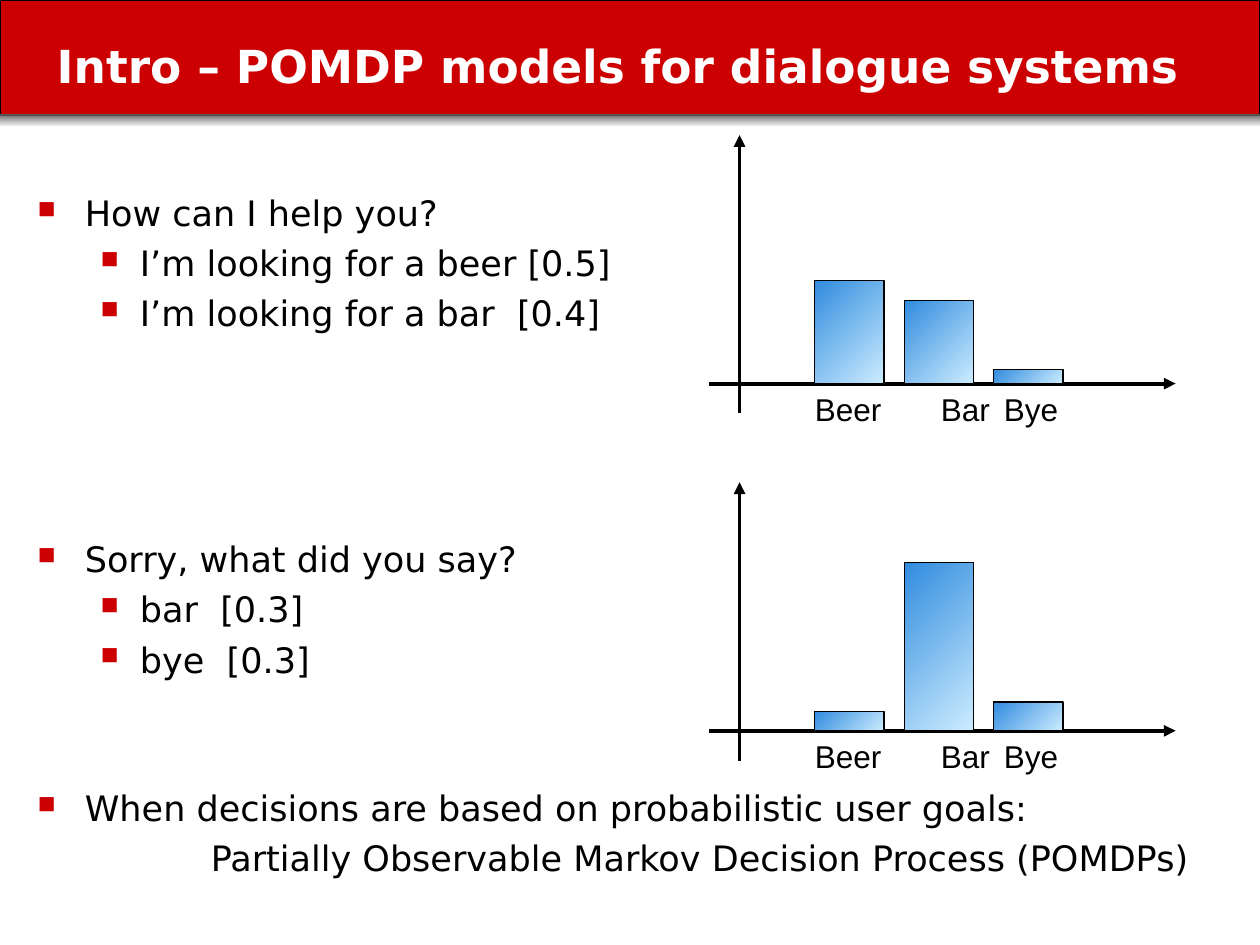
import pptx
import pptx.util
import pptx.dml.color
import pptx.enum.shapes
import pptx.enum.text
import pptx.oxml
import pptx.oxml.ns

Pt = pptx.util.Pt
qn = pptx.oxml.ns.qn
SHAPE = pptx.enum.shapes.MSO_SHAPE
LINE = pptx.enum.shapes.MSO_CONNECTOR
ANCHOR = pptx.enum.text.MSO_ANCHOR
ALIGN = pptx.enum.text.PP_ALIGN

COLORS = {"red": "CC0000", "black": "000000", "white": "FFFFFF",
          "dark": "5C5C5C", "gray": "808080", "blue": "318CDE", "pale": "CCECFF"}
FONTS = {
    "title": {"name": "DejaVu Sans", "size": Pt(26), "bold": True, "color": "white"},
    "body": {"name": "DejaVu Sans", "size": Pt(20), "color": "black"},
    "label": {"name": "Arial", "size": Pt(18), "color": "black"},
}
# Space before a paragraph: normal, and gaps between topics
NEAR, WIDE, MID = 4.7, 116.5, 60.6
# Left margin and hanging indent of each kind of paragraph
INDENTS = {"main": (27, -27), "sub": (58.5, -22.5), "plain": (99, 0)}
LINES = [
    ("main", NEAR, "How can I help you?"),
    ("sub", NEAR, "I’m looking for a beer [0.5]"),
    ("sub", NEAR, "I’m looking for a bar  [0.4]"),
    ("main", WIDE, "Sorry, what did you say?"),
    ("sub", NEAR, "bar  [0.3]"),
    ("sub", NEAR, "bye  [0.3]"),
    ("main", MID, "When decisions are based on probabilistic user goals:"),
    ("plain", NEAR, "Partially Observable Markov Decision Process (POMDPs)"),
]
LABELS = ["Beer", "Bar", "Bye"]
STOPS = [10, 68.3, 121]


def rgb(name):
    return pptx.dml.color.RGBColor.from_string(COLORS[name])


def node(parent, tag, **attrs):
    child = pptx.oxml.parse_xml(
        '<%s xmlns:a="http://schemas.openxmlformats.org/drawingml/2006/main"/>' % tag)
    for key, value in attrs.items():
        child.set(key, str(value))
    parent.append(child)
    return child


def style(run, kind):
    for key, value in FONTS[kind].items():
        if key == "color":
            run.font.color.rgb = rgb(value)
        else:
            setattr(run.font, key, value)


def write(para, text, kind):
    run = para.add_run()
    run.text = text
    style(run, kind)


def rect(slide, box, fill, angle=None, line=True):
    shape = slide.shapes.add_shape(SHAPE.RECTANGLE, *map(Pt, box))
    shape.shadow.inherit = False
    if angle is None:
        shape.fill.solid()
        shape.fill.fore_color.rgb = rgb(fill)
    else:
        shape.fill.gradient()
        shape.fill.gradient_angle = angle
        for stop, name in zip(shape.fill.gradient_stops, fill):
            stop.color.rgb = rgb(name)
    if line:
        shape.line.color.rgb = rgb("black")
        shape.line.width = Pt(0.75)
    else:
        shape.line.fill.background()
    return shape


def arrow(slide, x1, y1, x2, y2):
    line = slide.shapes.add_connector(LINE.STRAIGHT, *map(Pt, (x1, y1, x2, y2)))
    line.line.color.rgb = rgb("black")
    line.line.width = Pt(2.25)
    node(line.line._get_or_add_ln(), "a:tailEnd", type="triangle")
    node(line.element.spPr, "a:effectLst")


def header(slide, box):
    x, y, w, h = box
    title = slide.shapes.title
    band = rect(slide, box, "red")
    shade = rect(slide, (x, y + h, w, 6), ("dark", "gray"), 270, False)
    # Fade the lower end of the shade to clear
    last = list(shade.element.spPr.iter(qn("a:srgbClr")))[-1]
    node(last, "a:alpha", val=0)
    for part in (band, shade):
        title.element.addprevious(part.element)
    place = {"left": x + 25.2, "top": y + 15.1, "width": w - 25.2, "height": 44.6}
    for key, value in place.items():
        setattr(title, key, Pt(value))
    frame = title.text_frame
    frame.vertical_anchor = ANCHOR.MIDDLE
    para = frame.paragraphs[0]
    para.alignment = ALIGN.LEFT
    write(para, "Intro – POMDP models for dialogue systems", "title")


def talk(slide, box):
    frame = slide.shapes.add_textbox(*map(Pt, box)).text_frame
    frame.word_wrap = True
    for i, (kind, gap, text) in enumerate(LINES):
        para = frame.add_paragraph() if i else frame.paragraphs[0]
        para.level = int(kind == "sub")
        para.space_before = Pt(gap)
        write(para, text, "body")
        props = para._p.get_or_add_pPr()
        left, hang = INDENTS[kind]
        props.set("marL", str(Pt(left)))
        props.set("indent", str(Pt(hang)))
        if kind == "plain":
            node(props, "a:buNone")
        else:
            node(node(props, "a:buClr"), "a:srgbClr", val=COLORS["red"])
            node(props, "a:buSzPct", val=70000)
            node(props, "a:buChar", char="■")


def graph(slide, box, bars):
    x, y, w, h = box
    base = y + h - 17
    # Axes and bars
    arrow(slide, x, base, x + w, base)
    for i, tall in enumerate(bars):
        rect(slide, (x + 60.2 + i * 51.1, base - tall, 39.6, tall),
             ("blue", "pale"), 315)
    arrow(slide, x + 17.2, y + h, x + 17.2, y)
    # Names under the bars, set on tab stops
    frame = slide.shapes.add_textbox(*map(Pt, (x + 43.2, base, 166.3, 28.8))).text_frame
    frame.word_wrap = True
    para = frame.paragraphs[0]
    write(para, "\t".join(LABELS), "label")
    props = para._p.get_or_add_pPr()
    props.set("marL", str(Pt(STOPS[0])))
    props.set("indent", "0")
    tabs = node(props, "a:tabLst")
    for stop in STOPS[1:]:
        node(tabs, "a:tab", pos=Pt(stop), algn="l")


def main():
    deck = pptx.Presentation()
    deck.slide_width, deck.slide_height = Pt(720), Pt(540)
    slide = deck.slides.add_slide(deck.slide_layouts[5])
    header(slide, (0, 0, 720, 65.7))
    talk(slide, (14.4, 105.8, 686.2, 434.2))
    for top, bars in ((77.2, (59, 47.5, 8)), (275.6, (11, 96, 16.5))):
        graph(slide, (405.4, top, 266.4, 159), bars)
    deck.save("out.pptx")


if __name__ == "__main__":
    main()
